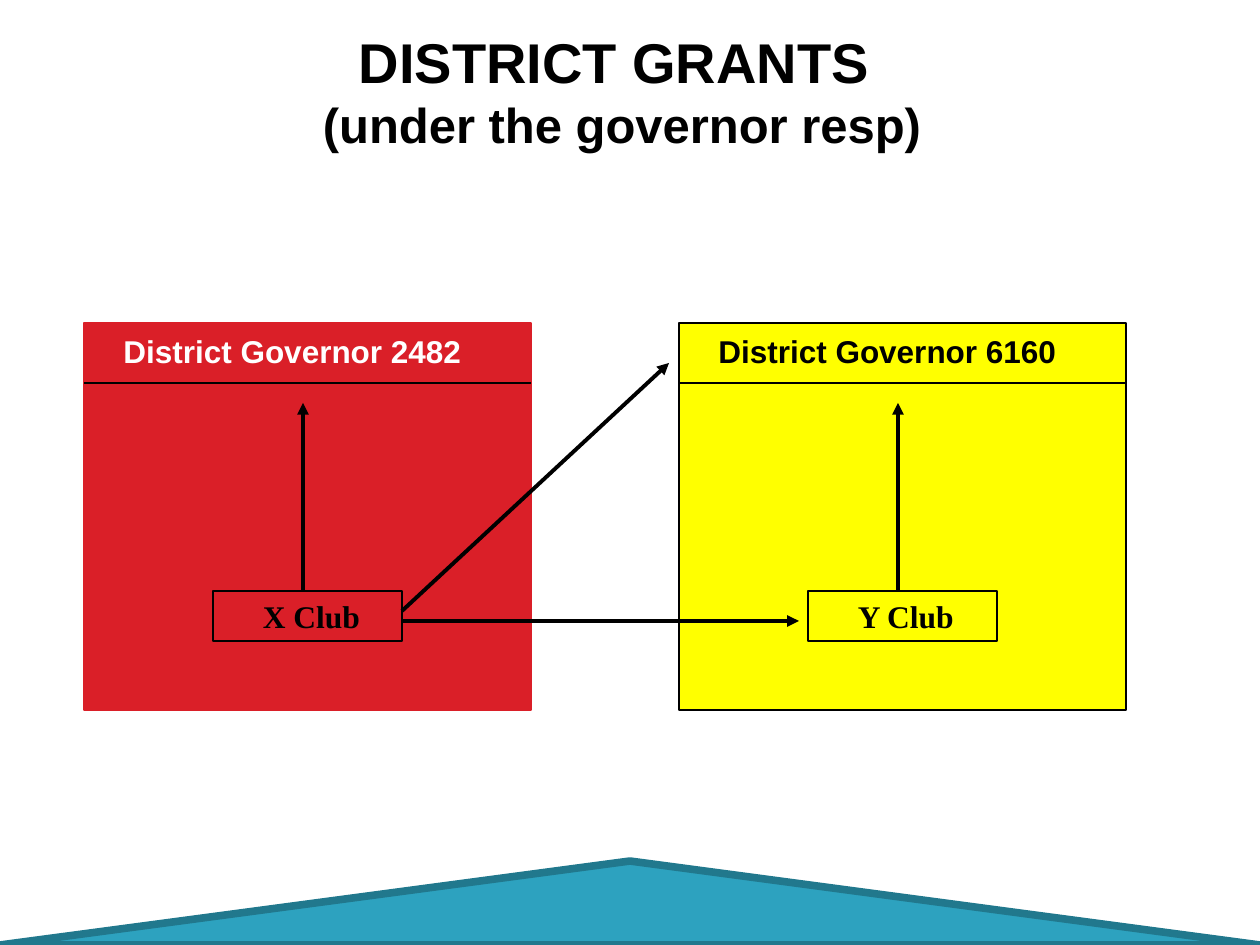
import dataclasses
from typing import Any, Optional

import lxml.etree
import pptx
import pptx.dml.color
import pptx.enum.shapes
import pptx.enum.text
import pptx.oxml.ns
import pptx.util

RGBColor = pptx.dml.color.RGBColor
Shapes = pptx.enum.shapes.MSO_SHAPE
Anchor = pptx.enum.text.MSO_ANCHOR
Align = pptx.enum.text.PP_ALIGN
AutoSize = pptx.enum.text.MSO_AUTO_SIZE

BLACK = RGBColor(0x00, 0x00, 0x00)
WHITE = RGBColor(0xFF, 0xFF, 0xFF)
RED = RGBColor(0xDA, 0x1F, 0x28)
YELLOW = RGBColor(0xFF, 0xFF, 0x00)
TEAL = RGBColor(0x2D, 0xA2, 0xBF)
DARK_TEAL = RGBColor(0x21, 0x78, 0x8D)

EMU_PER_PX = 914400 / 126
THIN = 0.75
THICK = 2.25


@dataclasses.dataclass(frozen=True)
class Box:
    left: int
    top: int
    width: int
    height: int


@dataclasses.dataclass(frozen=True)
class District:
    left: int
    governor: str
    club: str
    fill: RGBColor
    outline: RGBColor
    label_color: RGBColor


DISTRICTS = (
    District(84, "District Governor 2482", " X Club", RED, RED, WHITE),
    District(679, "District Governor 6160", " Y Club", YELLOW, BLACK, BLACK),
)


def px(value: int) -> int:
    return pptx.util.Emu(round(value * EMU_PER_PX))


def set_attributes(target: Any, values: dict[str, Any]) -> None:
    for name, value in values.items():
        setattr(target, name, value)


def frame(box: Box) -> dict[str, int]:
    return {name: px(value) for name, value in dataclasses.asdict(box).items()}


def add_outlined_shape(slide: Any, kind: Any, box: Box, fill: Optional[RGBColor],
                       line: RGBColor, weight: float) -> Any:
    shape = slide.shapes.add_shape(kind, *frame(box).values())
    shape.shadow.inherit = False
    if fill is None:
        shape.fill.background()
    else:
        shape.fill.solid()
        shape.fill.fore_color.rgb = fill
    shape.line.color.rgb = line
    shape.line.width = pptx.util.Pt(weight)
    return shape


def write_paragraph(paragraph: Any, text: str, size: int, color: RGBColor = BLACK,
                    font: str = "Arial", alignment: Any = Align.CENTER) -> None:
    paragraph.alignment = alignment
    run = paragraph.add_run()
    run.text = text
    set_attributes(run.font, {"name": font, "size": pptx.util.Pt(size), "bold": True})
    run.font.color.rgb = color


def add_line(slide: Any, start: tuple[int, int], end: tuple[int, int],
             weight: float, arrow: bool = False) -> None:
    connector = slide.shapes.add_connector(
        pptx.enum.shapes.MSO_CONNECTOR.STRAIGHT, *map(px, start + end))
    connector.line.color.rgb = BLACK
    connector.line.width = pptx.util.Pt(weight)
    qualified = pptx.oxml.ns.qn
    if arrow:
        line = connector.line._get_or_add_ln()
        lxml.etree.SubElement(line, qualified("a:tailEnd"), type="triangle")
    lxml.etree.SubElement(connector._element.spPr, qualified("a:effectLst"))


def add_title(slide: Any) -> None:
    title = slide.shapes.title
    set_attributes(title, frame(Box(310, 21, 624, 139)))
    set_attributes(title.text_frame, {
        "word_wrap": False, "vertical_anchor": Anchor.TOP,
        "auto_size": AutoSize.SHAPE_TO_FIT_TEXT})
    write_paragraph(title.text_frame.paragraphs[0], "DISTRICT GRANTS ", 32)
    write_paragraph(title.text_frame.add_paragraph(), "(under the governor resp)", 28)


def add_district(slide: Any, district: District) -> None:
    left = district.left
    add_outlined_shape(slide, Shapes.RECTANGLE, Box(left, 323, 447, 387),
                       district.fill, district.outline, THIN)
    add_line(slide, (left, 383), (left + 447, 383), THIN)

    label = slide.shapes.add_textbox(*frame(Box(left + 27, 326, 365, 50)).values())
    set_attributes(label.text_frame, {
        "word_wrap": False, "auto_size": AutoSize.SHAPE_TO_FIT_TEXT})
    write_paragraph(label.text_frame.paragraphs[0], district.governor, 18,
                    district.label_color, alignment=Align.LEFT)

    club = add_outlined_shape(slide, Shapes.RECTANGLE, Box(left + 129, 591, 189, 50),
                              None, BLACK, THIN)
    set_attributes(club.text_frame, {
        "word_wrap": False, "vertical_anchor": Anchor.MIDDLE})
    write_paragraph(club.text_frame.paragraphs[0], district.club, 18,
                    font="Times New Roman")
    add_line(slide, (left + 219, 591), (left + 219, 403), THICK, arrow=True)


def main() -> None:
    """Build the district grants slide."""
    presentation = pptx.Presentation()
    set_attributes(presentation, {"slide_width": px(1260), "slide_height": px(945)})
    slide = presentation.slides.add_slide(presentation.slide_layouts[5])
    add_outlined_shape(slide, Shapes.ISOSCELES_TRIANGLE, Box(0, 861, 1260, 84),
                       TEAL, DARK_TEAL, 4.33)
    add_title(slide)
    for district in DISTRICTS:
        add_district(slide, district)
    add_line(slide, (402, 611), (669, 363), THICK, arrow=True)
    add_line(slide, (402, 621), (799, 621), THICK, arrow=True)
    presentation.save("out.pptx")


if __name__ == "__main__":
    main()
